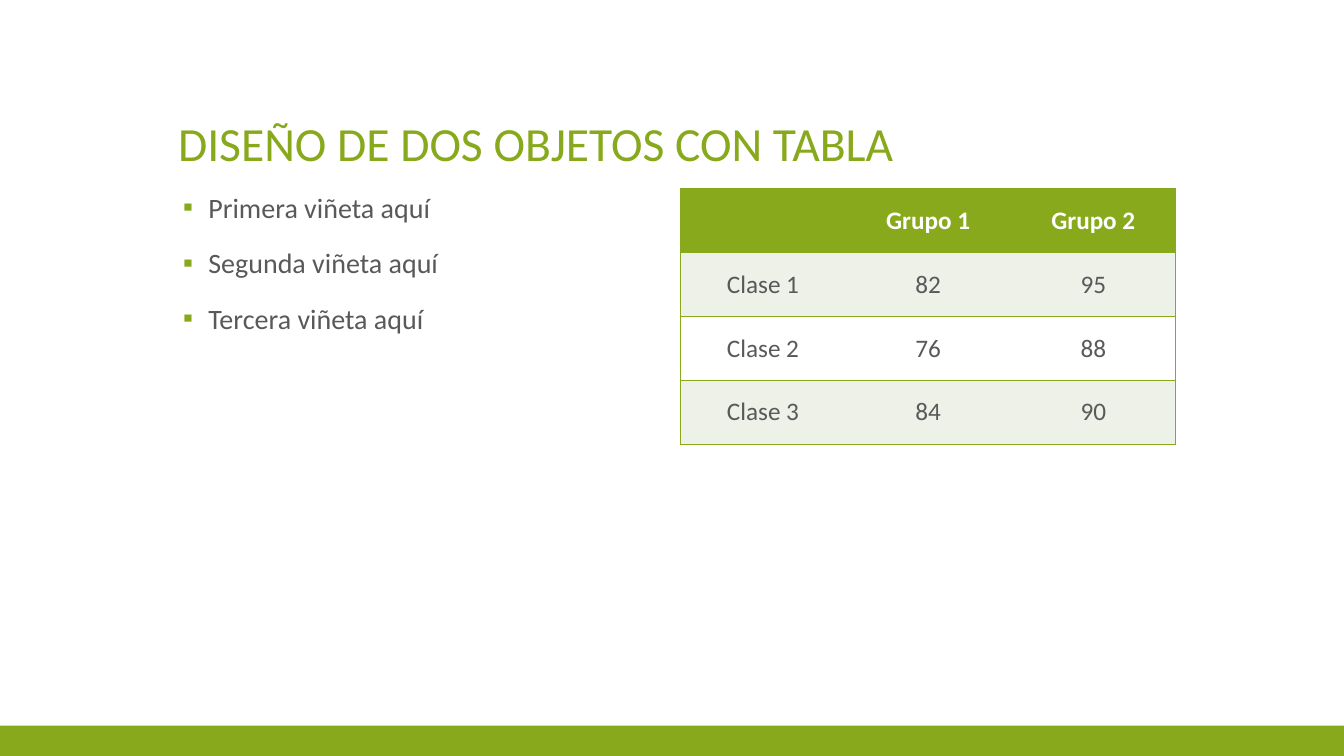
from lxml import etree
from pptx import Presentation
from pptx import util as u
from pptx.dml.color import RGBColor
from pptx.enum import shapes, text
from pptx.oxml import ns

PX = 9525
FONT = "Calibri"
COLORS = {"green": "87A91B", "gray": "595959", "white": "FFFFFF", "band": "EDF1E8"}
TITLE = "DISEÑO DE DOS OBJETOS CON TABLA"
BULLETS = ["Primera viñeta aquí", "Segunda viñeta aquí", "Tercera viñeta aquí"]
ROWS = [
    ["", "Grupo 1", "Grupo 2"],
    ["Clase 1", "82", "95"],
    ["Clase 2", "76", "88"],
    ["Clase 3", "84", "90"],
]


def px(*lengths):
    """Turn pixel lengths into EMU."""
    return [u.Emu(length * PX) for length in lengths]


def rgb(name):
    """Look up a named colour."""
    return RGBColor.from_string(COLORS[name])


def add_xml(parent, tag, **attributes):
    """Append a DrawingML element and return it."""
    return etree.SubElement(parent, ns.qn(tag), attributes)


def write(paragraph, words, size=18, color="gray", bold=False, align=text.PP_ALIGN.LEFT,
          line_spacing=None, before=None):
    """Fill a paragraph with one formatted run."""
    paragraph.alignment = align
    if line_spacing is not None:
        paragraph.line_spacing = line_spacing
    if before is not None:
        paragraph.space_before = u.Pt(before)
    run = paragraph.add_run()
    run.text = words
    run.font.name = FONT
    run.font.size = u.Pt(size)
    run.font.bold = bold
    run.font.color.rgb = rgb(color)


def add_bullet(paragraph, margin, hanging):
    """Give a paragraph a green square bullet with a hanging indent."""
    properties = paragraph._p.get_or_add_pPr()
    properties.set("marL", str(margin * PX))
    properties.set("indent", str(-hanging * PX))
    color = add_xml(properties, "a:buClr")
    add_xml(color, "a:srgbClr", val=COLORS["green"])
    add_xml(properties, "a:buFont", typeface=FONT)
    add_xml(properties, "a:buChar", char="▪")


def add_border(cell, side, visible):
    """Draw one side of a cell in green, or leave it clear."""
    line = add_xml(cell._tc.get_or_add_tcPr(), f"a:ln{side}", w=str(u.Pt(1)))
    if visible:
        fill = add_xml(line, "a:solidFill")
        add_xml(fill, "a:srgbClr", val=COLORS["green"])
    else:
        add_xml(line, "a:noFill")


def add_footer_band(slide, left, top, width, height):
    """Draw the green band along the foot of the slide."""
    band = slide.shapes.add_shape(shapes.MSO_SHAPE.RECTANGLE, *px(left, top, width, height))
    band.shadow.inherit = False
    band.fill.solid()
    band.fill.fore_color.rgb = rgb("green")
    band.line.fill.background()


def place_title(slide, left, top, width, height):
    """Place the title at the foot of its box."""
    title = slide.shapes.title
    title.left, title.top, title.width, title.height = px(left, top, width, height)
    frame = title.text_frame
    frame.word_wrap = True
    frame.auto_size = text.MSO_AUTO_SIZE.NONE
    frame.vertical_anchor = text.MSO_ANCHOR.BOTTOM
    write(frame.paragraphs[0], TITLE, size=34, color="green", line_spacing=0.9)


def add_bullets(slide, left, top, width, height):
    """Write the bulleted list."""
    frame = slide.shapes.add_textbox(*px(left, top, width, height)).text_frame
    frame.word_wrap = True
    for index, words in enumerate(BULLETS):
        paragraph = frame.add_paragraph() if index else frame.paragraphs[0]
        write(paragraph, words, size=20, line_spacing=0.9, before=18)
        add_bullet(paragraph, margin=29, hanging=24)


def add_scores(slide, left, top, width, height):
    """Add the table of scores with a green header and banded rows."""
    last = len(ROWS[0]) - 1
    table = slide.shapes.add_table(len(ROWS), last + 1, *px(left, top, width, height)).table
    table.horz_banding = False
    for row, values in enumerate(ROWS):
        header = row == 0
        fill = "green" if header else "band" if row % 2 else "white"
        for column, words in enumerate(values):
            cell = table.cell(row, column)
            cell.vertical_anchor = text.MSO_ANCHOR.MIDDLE
            sides = {"L": column == 0, "R": column == last, "T": True, "B": True}
            for side, visible in sides.items():
                add_border(cell, side, visible)
            cell.fill.solid()
            cell.fill.fore_color.rgb = rgb(fill)
            if words:
                write(cell.text_frame.paragraphs[0], words, bold=header,
                      color="white" if header else "gray", align=text.PP_ALIGN.CENTER)


def main():
    """Build and save the slide."""
    presentation = Presentation()
    presentation.slide_width, presentation.slide_height = px(1280, 720)
    slide = presentation.slides.add_slide(presentation.slide_layouts[5])
    add_footer_band(slide, 0, 691, 1280, 29)
    place_title(slide, 160, 48, 960, 120)
    add_bullets(slide, 160, 180, 472, 468)
    add_scores(slide, 648, 180, 472, 243)
    presentation.save("out.pptx")


if __name__ == "__main__":
    main()
